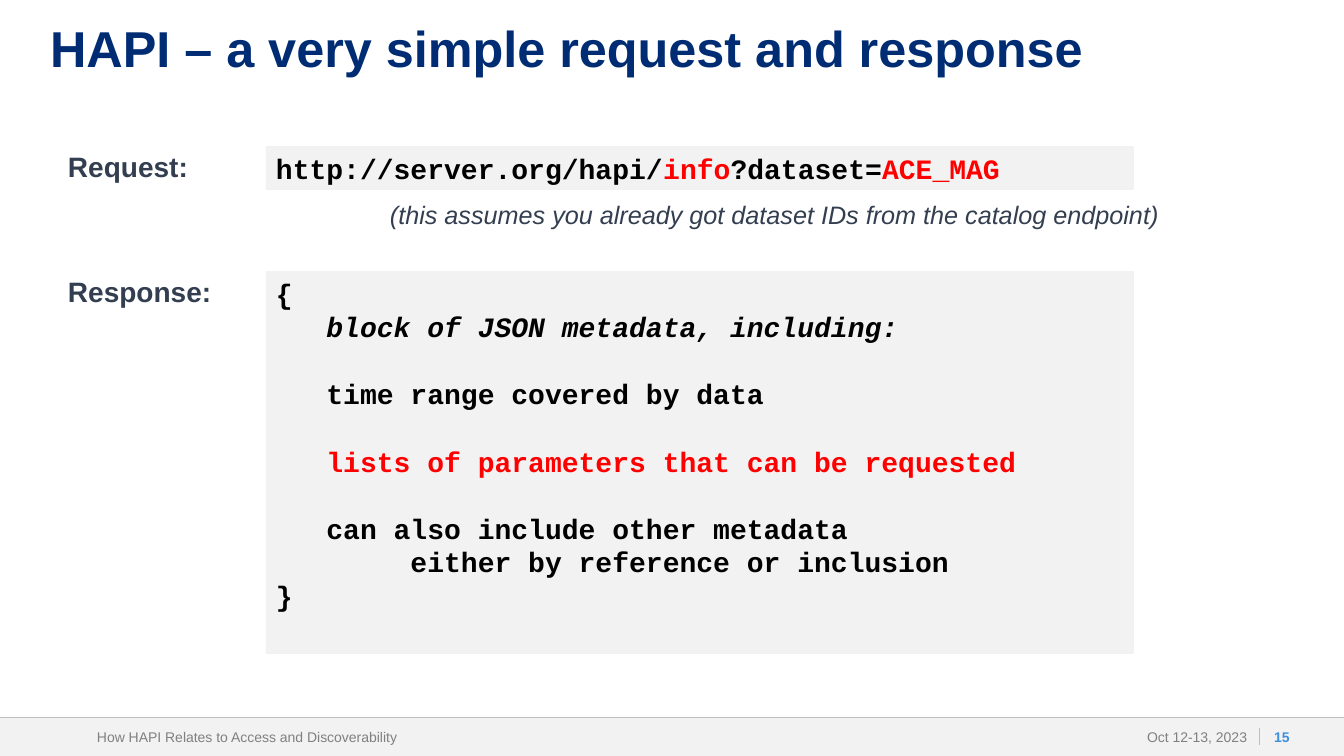
from dataclasses import dataclass

from lxml import etree
from pptx import Presentation
from pptx import util as u
from pptx.dml.color import RGBColor
from pptx.enum import shapes, text
from pptx.oxml.ns import qn

PX = 914400 / 100.8
ALIGN, ANCHOR = text.PP_ALIGN, text.MSO_ANCHOR


@dataclass(frozen=True)
class Theme:
    navy: str = "002C73"
    slate: str = "333F50"
    panel: str = "F2F2F2"
    rule: str = "BFBFBF"
    grey: str = "808080"
    blue: str = "3E8EDE"
    ink: str = "000000"
    red: str = "FF0000"
    sans: str = "Arial"
    mono: str = "Courier New"
    title: int = 36
    body: int = 20
    note: int = 18
    foot: int = 10
    pitch: int = 24


T = Theme()


def px(*vals):
    return [u.Emu(round(v * PX)) for v in vals]


def rgb(code):
    return RGBColor.from_string(code)


def write(frame, lines, size=T.body, font=T.sans, color=T.slate, bold=False,
          italic=False, align=ALIGN.LEFT, anchor=ANCHOR.TOP, inset=(10, 5),
          wrap=True, lead=None):
    """Each line is a string or a dict of runs, space before and italic."""
    frame.word_wrap, frame.vertical_anchor = wrap, anchor
    frame.margin_left, frame.margin_top = px(*inset)
    frame.margin_right, frame.margin_bottom = px(*inset)
    for i, line in enumerate([lines] if isinstance(lines, str) else lines):
        part = line if isinstance(line, dict) else {"runs": [(line, color)]}
        para = frame.paragraphs[0] if i == 0 else frame.add_paragraph()
        para.alignment = align
        if lead:
            para.line_spacing = lead
        if part.get("gap"):
            para.space_before = u.Pt(part["gap"])
        for words, tint in part["runs"]:
            run = para.add_run()
            run.text = words
            run.font.name, run.font.size = font, u.Pt(size)
            run.font.bold = bold
            run.font.italic = part.get("italic", italic)
            run.font.color.rgb = rgb(tint)


def label(slide, box, lines, **form):
    area = slide.shapes.add_textbox(*px(*box))
    write(area.text_frame, lines, **form)


def panel(slide, box):
    rect = slide.shapes.add_shape(shapes.MSO_SHAPE.RECTANGLE, *px(*box))
    rect.shadow.inherit = False
    rect.fill.solid()
    rect.fill.fore_color.rgb = rgb(T.panel)
    rect.line.fill.background()
    return rect


def rule(slide, *ends):
    line = slide.shapes.add_connector(shapes.MSO_CONNECTOR.STRAIGHT, *px(*ends))
    line.line.color.rgb, line.line.width = rgb(T.rule), u.Pt(0.5)
    etree.SubElement(line._element.spPr, qn("a:effectLst"))


def footer(slide, box, topic, date, page):
    x, y, w, h = box
    panel(slide, box)
    rule(slide, x, y, x + w, y)
    rule(slide, x + w - 85, y + 11, x + w - 85, y + 28)
    form = dict(size=T.foot, anchor=ANCHOR.MIDDLE, inset=(10, 0))
    label(slide, (x + 87, y, 353, h), topic, color=T.grey, **form)
    label(slide, (x + w - 410, y, 323, h), date, color=T.grey,
          align=ALIGN.RIGHT, **form)
    form["inset"] = (0, 0)
    label(slide, (x + w - 83, y, 42, h), page, color=T.blue, bold=True,
          align=ALIGN.CENTER, **form)


def heading(slide, box, words):
    head = slide.shapes.title
    head.left, head.top, head.width, head.height = px(*box)
    write(head.text_frame, words, size=T.title, color=T.navy, bold=True,
          inset=(0, 0), lead=0.9)


def listing(slide, box, name, lines, lead=None):
    """A bold label at the left with a code panel beside it."""
    x, y, w, h = box
    label(slide, (x, y - 2, 165, 44), name, bold=True)
    code = panel(slide, (x + 208, y, w - 208, h))
    write(code.text_frame, lines, font=T.mono, color=T.ink, bold=True, lead=lead)


def build():
    deck = Presentation()
    deck.slide_width, deck.slide_height = px(1344, 756)
    slide = deck.slides.add_slide(deck.slide_layouts[5])

    # Footer band and title
    footer(slide, (0, 717, 1344, 39),
           "How HAPI Relates to Access and Discoverability",
           "Oct 12-13, 2023", "15")
    heading(slide, (50, 24, 1243, 84),
            "HAPI – a very simple request and response")

    # Request
    listing(slide, (58, 146, 1076, 44), "Request:", [
        {"runs": [("http://server.org/hapi/", T.ink), ("info", T.red),
                  ("?dataset=", T.ink), ("ACE_MAG", T.red)]}])
    label(slide, (380, 194, 796, 40),
          "(this assumes you already got dataset IDs from the catalog endpoint)",
          size=T.note, italic=True)

    # Response
    listing(slide, (58, 271, 1076, 383), "Response:", [
        "{",
        {"runs": [("   block of JSON metadata, including:", T.ink)],
         "italic": True},
        {"runs": [("   time range covered by data", T.ink)], "gap": T.pitch},
        {"runs": [("   lists of parameters that can be requested", T.red)],
         "gap": T.pitch},
        {"runs": [("   can also include other metadata", T.ink)],
         "gap": T.pitch},
        "        either by reference or inclusion",
        "}"], lead=u.Pt(T.pitch))

    deck.save("out.pptx")


if __name__ == "__main__":
    build()
